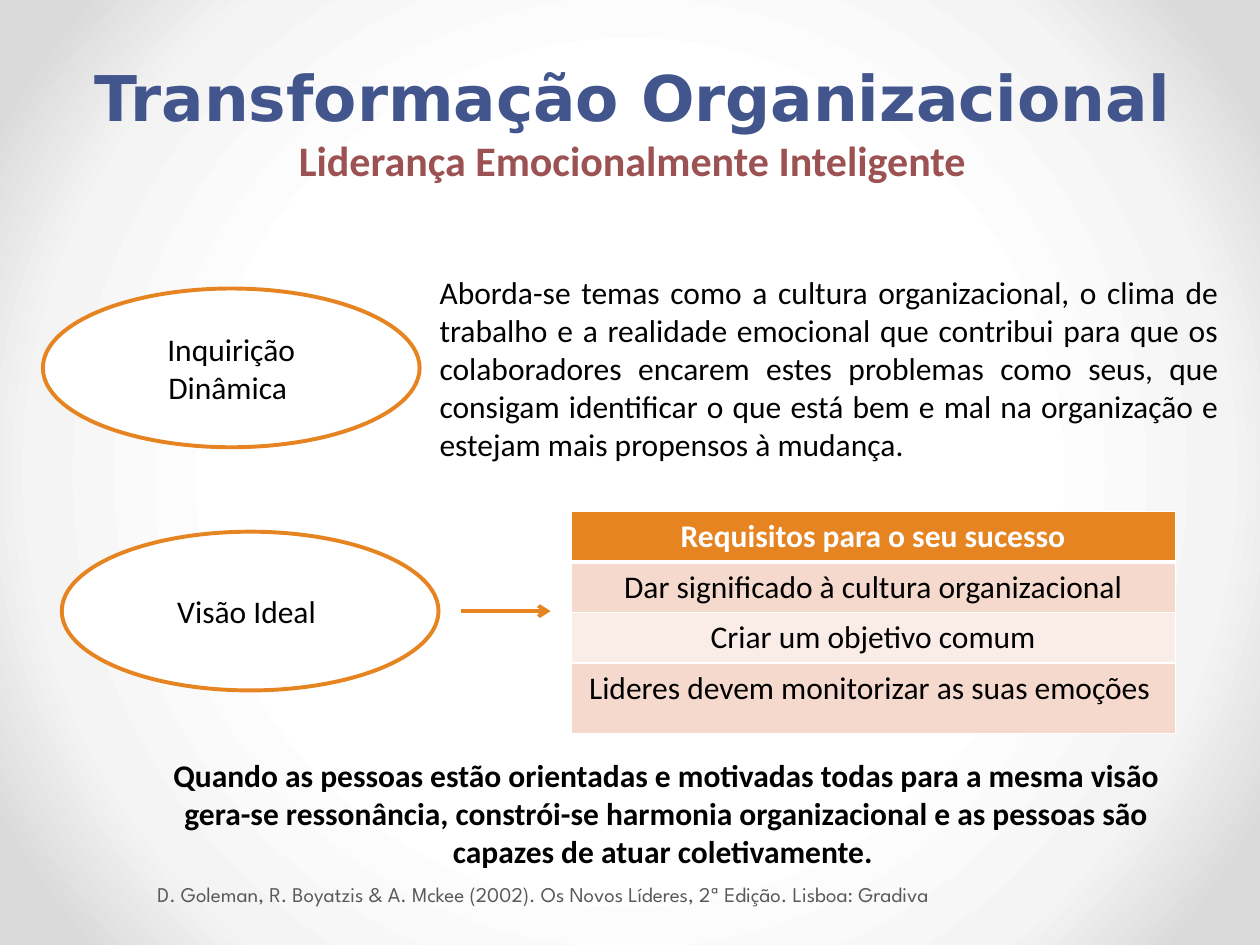
from lxml.etree import SubElement
from pptx import Presentation
from pptx.dml.color import RGBColor
from pptx.enum.shapes import MSO_CONNECTOR, MSO_SHAPE
from pptx.enum.text import MSO_ANCHOR, MSO_AUTO_SIZE, PP_ALIGN
from pptx.oxml import parse_xml
from pptx.oxml.ns import nsdecls, qn
from pptx.util import Inches, Pt

ORANGE = RGBColor(0xE6, 0x84, 0x22)
BAND_DARK = RGBColor(0xF5, 0xD9, 0xCD)
BAND_LIGHT = RGBColor(0xFA, 0xED, 0xE8)
WHITE = RGBColor(0xFF, 0xFF, 0xFF)
BLACK = RGBColor(0, 0, 0)
BLUE = RGBColor(0x42, 0x56, 0x8D)
RED = RGBColor(0x9C, 0x52, 0x52)
GREY = RGBColor(0x59, 0x59, 0x59)

# Content
TITLE = "Transformação Organizacional"
SUBTITLE = "Liderança Emocionalmente Inteligente"
STAGES = [("Visão Ideal ", 0.49, 4.22), ("Inquirição Dinâmica ", 0.34, 2.29)]
INQUIRY = (
    "Aborda-se temas como a cultura organizacional, o clima de trabalho e a "
    "realidade emocional que contribui para que os colaboradores encarem estes "
    "problemas como seus, que consigam identificar o que está bem e mal na "
    "organização e estejam mais propensos à mudança."
)
REQUIREMENTS = [
    "Requisitos para o seu sucesso",
    "Dar significado à cultura organizacional",
    "Criar um objetivo comum",
    "Lideres devem monitorizar as suas emoções ",
]
ROW_HEIGHTS = [0.39, 0.39, 0.39, 0.56]
CONCLUSION = (
    "Quando as pessoas estão orientadas e motivadas todas para a mesma visão "
    "gera-se ressonância, constrói-se harmonia organizacional e as pessoas são "
    "capazes de atuar coletivamente. "
)
REFERENCE = ("D. Goleman, R. Boyatzis & A. Mckee (2002). Os Novos Líderes, "
             "2ª Edição. Lisboa: Gradiva")
BACKGROUND_STOPS = [(50, "FFFFFF"), (76, "F4F4F4"), (92, "DADADA")]


def write(paragraph, text, size=18, font="Calibri", color=BLACK, bold=False,
          align=PP_ALIGN.CENTER):
    paragraph.alignment = align
    run = paragraph.add_run()
    run.text = text
    run.font.size = Pt(size)
    run.font.name = font
    run.font.color.rgb = color
    run.font.bold = bold


def add_text(slide, box, text, anchor=MSO_ANCHOR.TOP, **text_format):
    frame = slide.shapes.add_textbox(*map(Inches, box)).text_frame
    frame.word_wrap = True
    frame.vertical_anchor = anchor
    write(frame.paragraphs[0], text, **text_format)
    return frame


def set_background(slide):
    stops = "".join(
        f'<a:gs pos="{position * 1000}"><a:srgbClr val="{color}"/></a:gs>'
        for position, color in BACKGROUND_STOPS)
    slide.background.fill.gradient()
    gradient = slide._element.find(".//" + qn("a:gradFill"))
    gradient.getparent().replace(gradient, parse_xml(
        f'<a:gradFill {nsdecls("a")} rotWithShape="1"><a:gsLst>{stops}</a:gsLst>'
        '<a:path path="circle"><a:fillToRect l="50000" t="50000" r="50000" '
        'b="50000"/></a:path></a:gradFill>'))


def set_borders(cell, bottom):
    properties = cell._tc.get_or_add_tcPr()
    widths = {"lnL": 1, "lnR": 1, "lnT": 1, "lnB": bottom}
    for index, (side, width) in enumerate(widths.items()):
        properties.insert(index, parse_xml(
            f'<a:{side} {nsdecls("a")} w="{Pt(width)}"><a:solidFill>'
            f'<a:srgbClr val="{WHITE}"/></a:solidFill></a:{side}>'))


def add_stage(slide, label, left, top):
    oval = slide.shapes.add_shape(MSO_SHAPE.OVAL, Inches(left), Inches(top),
                                  Inches(2.99), Inches(1.26))
    oval.shadow.inherit = False
    oval.fill.solid()
    oval.fill.fore_color.rgb = WHITE
    oval.line.color.rgb = ORANGE
    oval.line.width = Pt(2.25)
    oval.text_frame.vertical_anchor = MSO_ANCHOR.MIDDLE
    write(oval.text_frame.paragraphs[0], label)


def add_arrow(slide, start, end, y):
    arrow = slide.shapes.add_connector(MSO_CONNECTOR.STRAIGHT, Inches(start),
                                       Inches(y), Inches(end), Inches(y))
    arrow.line.color.rgb = ORANGE
    arrow.line.width = Pt(2.25)
    SubElement(arrow.line._get_or_add_ln(), qn("a:tailEnd"), type="arrow")
    SubElement(arrow._element.spPr, qn("a:effectLst"))


def add_requirements(slide):
    table = slide.shapes.add_table(
        len(REQUIREMENTS), 1, Inches(4.53), Inches(4.06), Inches(4.8),
        Inches(sum(ROW_HEIGHTS))).table
    for index, (text, height) in enumerate(zip(REQUIREMENTS, ROW_HEIGHTS)):
        header = index == 0
        table.rows[index].height = Inches(height)
        cell = table.cell(index, 0)
        cell.fill.solid()
        cell.fill.fore_color.rgb = (
            ORANGE if header else BAND_DARK if index % 2 else BAND_LIGHT)
        set_borders(cell, bottom=3 if header else 1)
        write(cell.text_frame.paragraphs[0], text, bold=header,
              color=WHITE if header else BLACK)


def main():
    deck = Presentation()
    deck.slide_width, deck.slide_height = Inches(10), Inches(7.5)
    slide = deck.slides.add_slide(deck.slide_layouts[5])
    set_background(slide)

    # Title and subtitle
    title = slide.shapes.title
    title.left, title.top = Inches(0.52), Inches(0.34)
    title.width, title.height = Inches(9), Inches(1.25)
    heading = title.text_frame
    heading.auto_size = MSO_AUTO_SIZE.NONE
    heading.vertical_anchor = MSO_ANCHOR.MIDDLE
    write(heading.paragraphs[0], TITLE, size=36, font="DejaVu Sans",
          color=BLUE, bold=True)
    write(heading.add_paragraph(), SUBTITLE, size=24, color=RED, bold=True)

    # Stages, with the explanation of each
    for stage in STAGES:
        add_stage(slide, *stage)
    add_text(slide, (3.39, 2.12, 6.38, 1.62), INQUIRY, align=PP_ALIGN.JUSTIFY)
    add_arrow(slide, 3.66, 4.37, 4.85)
    add_requirements(slide)

    # Conclusion and reference
    add_text(slide, (1.06, 5.95, 8.46, 1.01), CONCLUSION, bold=True)
    reference = add_text(slide, (1.22, 6.9, 8.14, 0.4), REFERENCE,
                         anchor=MSO_ANCHOR.MIDDLE, size=12,
                         font="League Spartan", color=GREY, align=PP_ALIGN.LEFT)
    reference.margin_left = Inches(0.03)
    reference.margin_right = Inches(0.05)

    deck.save("out.pptx")


if __name__ == "__main__":
    main()
